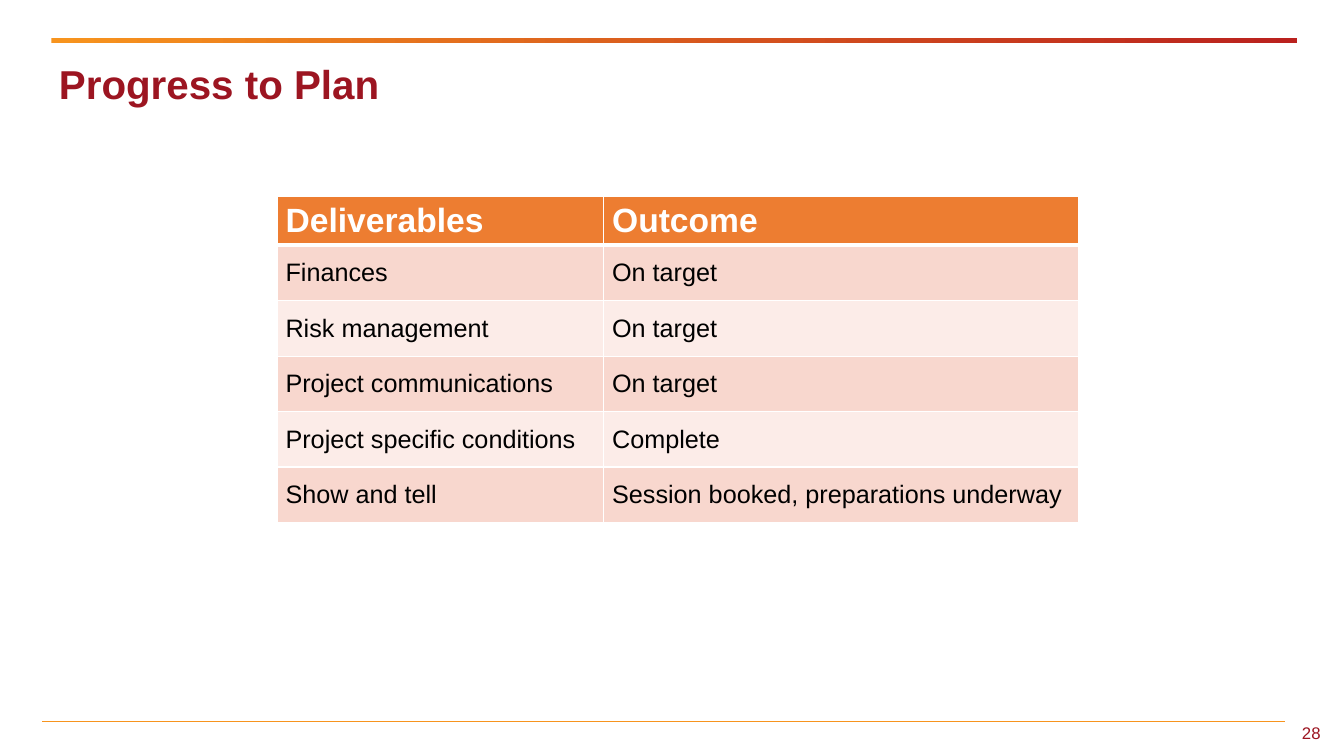
from dataclasses import dataclass

from lxml import etree
from pptx import Presentation
from pptx.dml.color import RGBColor
from pptx.enum.shapes import MSO_CONNECTOR, MSO_SHAPE
from pptx.enum.text import MSO_ANCHOR, PP_ALIGN
from pptx.oxml.ns import qn
from pptx.util import Pt

LEFT, RIGHT = PP_ALIGN.LEFT, PP_ALIGN.RIGHT
TOP, MIDDLE = MSO_ANCHOR.TOP, MSO_ANCHOR.MIDDLE
RECTANGLE, STRAIGHT = MSO_SHAPE.RECTANGLE, MSO_CONNECTOR.STRAIGHT

FONT = "Arial"
WHITE, BLACK = "FFFFFF", "000000"
ORANGE, RED, DARK_RED = "F7941E", "BA211E", "9C1521"
HEADER_FILL = "ED7D31"
BAND_FILLS = ("F8D7CE", "FCECE8")

COLUMN_WIDTHS = (233.3, 339.1)
HEADER_HEIGHT, ROW_HEIGHT = 33.6, 39.6


@dataclass(frozen=True)
class Label:
    text: str
    left: float
    top: float
    width: float
    height: float
    size: float
    bold: bool
    align: PP_ALIGN
    anchor: MSO_ANCHOR
    inset: float
    line_spacing: float


@dataclass(frozen=True)
class Progress:
    deliverable: str
    outcome: str


LABELS = (
    Label("28", 846.7, 512.6, 103.7, 21.6, 12, False, RIGHT, TOP, 7.2, 1.0),
    Label("Progress to Plan", 36.7, 41.8, 857.5, 40.3, 28.8, True, LEFT, MIDDLE, 5.4, 0.9),
)
HEADER = Progress("Deliverables", "Outcome")
PROGRESS = (
    Progress("Finances", "On target"),
    Progress("Risk management", "On target"),
    Progress("Project communications", "On target"),
    Progress("Project specific conditions", "Complete"),
    Progress("Show and tell", "Session booked, preparations underway"),
)


def color(value: str) -> RGBColor:
    return RGBColor.from_string(value)


def style_paragraph(para, size: float, bold: bool, font_color: str) -> None:
    para.font.name = FONT
    para.font.size = Pt(size)
    para.font.bold = bold
    para.font.color.rgb = color(font_color)


def add_label(page, label: Label) -> None:
    box = page.shapes.add_textbox(
        Pt(label.left), Pt(label.top), Pt(label.width), Pt(label.height))
    frame = box.text_frame
    frame.word_wrap = True
    frame.vertical_anchor = label.anchor
    frame.margin_left = frame.margin_right = Pt(label.inset)
    para = frame.paragraphs[0]
    para.text = label.text
    para.alignment = label.align
    para.line_spacing = label.line_spacing
    style_paragraph(para, label.size, label.bold, DARK_RED)


def add_top_bar(page) -> None:
    bar = page.shapes.add_shape(RECTANGLE, Pt(36.7), Pt(27.4), Pt(889.9), Pt(3.6))
    bar.shadow.inherit = False
    bar.line.fill.background()
    bar.fill.gradient()
    bar.fill.gradient_angle = 0
    for stop, stop_color in zip(bar.fill.gradient_stops, (ORANGE, RED)):
        stop.color.rgb = color(stop_color)


def add_footer_line(page) -> None:
    line = page.shapes.add_connector(STRAIGHT, Pt(30.2), Pt(515.5), Pt(918), Pt(515.5))
    line.line.color.rgb = color(ORANGE)
    line.line.width = Pt(1)
    etree.SubElement(line._element.spPr, qn("a:effectLst"))


def set_borders(cell, bottom_width: float, top_width: float) -> None:
    """Put white borders ahead of the fill, as the schema orders them."""
    properties = cell._tc.get_or_add_tcPr()
    widths = (("a:lnL", 1), ("a:lnR", 1), ("a:lnT", top_width), ("a:lnB", bottom_width))
    for position, (tag, width) in enumerate(widths):
        border = etree.Element(qn(tag), w=str(Pt(width)))
        fill = etree.SubElement(border, qn("a:solidFill"))
        etree.SubElement(fill, qn("a:srgbClr"), val=WHITE)
        properties.insert(position, border)


def fill_cell(cell, text: str, row: int) -> None:
    is_header = row == 0
    cell.vertical_anchor = MIDDLE
    cell.margin_left = cell.margin_right = Pt(6)
    cell.margin_top = cell.margin_bottom = Pt(3)
    cell.fill.solid()
    cell.fill.fore_color.rgb = color(
        HEADER_FILL if is_header else BAND_FILLS[(row - 1) % 2])
    set_borders(cell, 3 if is_header else 1, 3 if row == 1 else 1)
    para = cell.text_frame.paragraphs[0]
    para.text = text
    style_paragraph(para, 24 if is_header else 18, is_header,
                    WHITE if is_header else BLACK)


def add_progress_table(page) -> None:
    entries = (HEADER, *PROGRESS)
    heights = (HEADER_HEIGHT, *[ROW_HEIGHT] * len(PROGRESS))
    table = page.shapes.add_table(
        len(entries), len(COLUMN_WIDTHS), Pt(198), Pt(140.4),
        Pt(sum(COLUMN_WIDTHS)), Pt(sum(heights))).table
    for column, width in zip(table.columns, COLUMN_WIDTHS):
        column.width = Pt(width)
    for row, (entry, height) in enumerate(zip(entries, heights)):
        table.rows[row].height = Pt(height)
        for column, text in enumerate((entry.deliverable, entry.outcome)):
            fill_cell(table.cell(row, column), text, row)


def main() -> None:
    deck = Presentation()
    deck.slide_width, deck.slide_height = Pt(960), Pt(540)
    page = deck.slides.add_slide(deck.slide_layouts[6])
    add_top_bar(page)
    add_footer_line(page)
    for label in LABELS:
        add_label(page, label)
    add_progress_table(page)
    deck.save("out.pptx")


if __name__ == "__main__":
    main()
